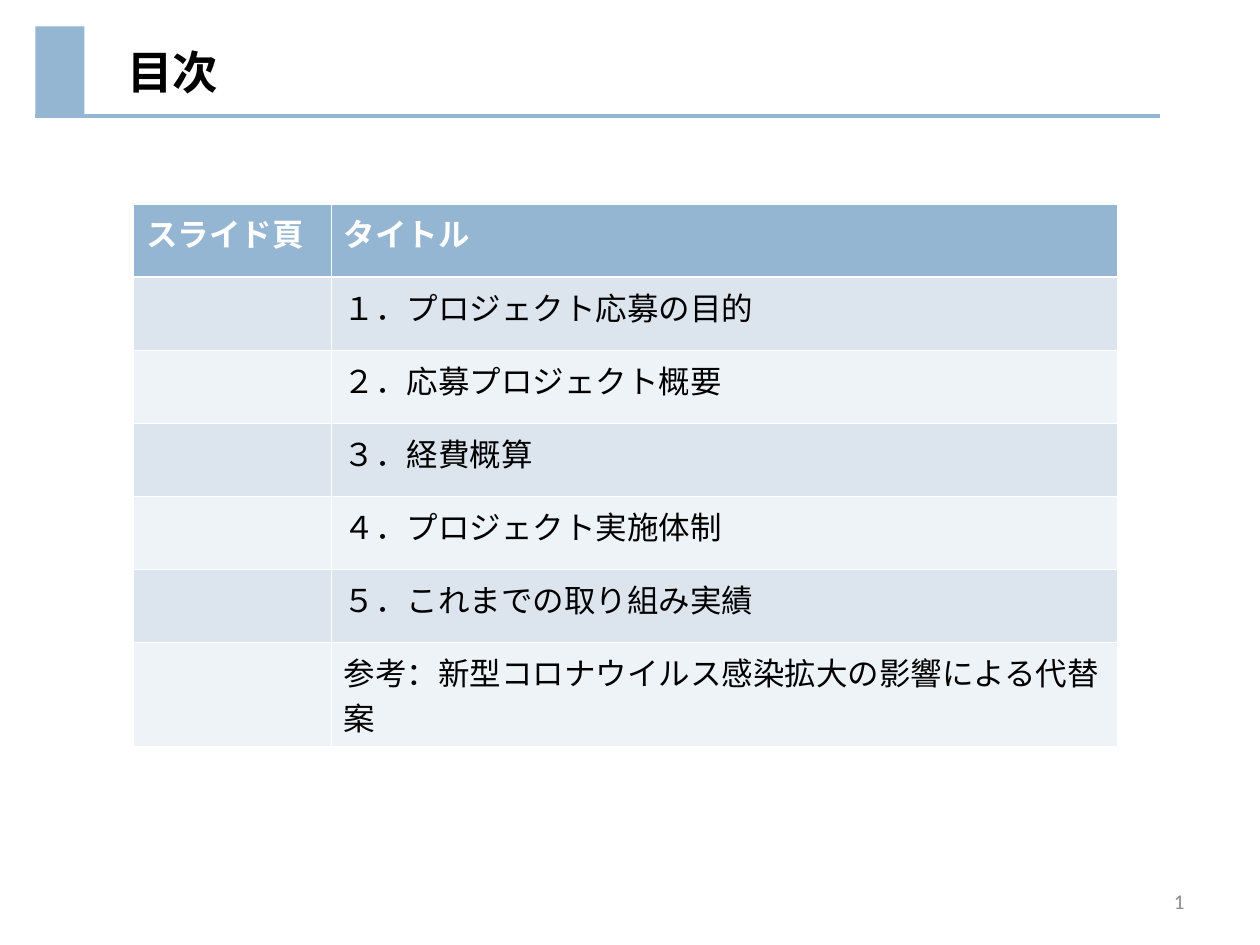
import pptx
import pptx.util
import pptx.dml.color
import pptx.enum.shapes
import pptx.enum.text
import lxml.etree

Inches, Pt = pptx.util.Inches, pptx.util.Pt
RGB = pptx.dml.color.RGBColor
ALIGN = pptx.enum.text.PP_ALIGN
MIDDLE = pptx.enum.text.MSO_ANCHOR.MIDDLE

# Content
TITLE = "目次"
HEADS = ("スライド頁", "タイトル")
ITEMS = [
    "１．プロジェクト応募の目的",
    "２．応募プロジェクト概要",
    "３．経費概算",
    "４．プロジェクト実施体制",
    "５．これまでの取り組み実績",
    ("参考：", "新型", "コロナウイルス感染拡大の影響による代替案"),
]

# Formats
BLUE = RGB(0x94, 0xB6, 0xD2)
BANDS = (RGB(0xDC, 0xE5, 0xEE), RGB(0xEE, 0xF3, 0xF7))
BLACK, WHITE, GREY = RGB(0, 0, 0), RGB(255, 255, 255), RGB(0x8C, 0x8C, 0x8C)
HEAD = {"name": "Calibri", "size": Pt(18), "bold": True}
BODY = {**HEAD, "bold": False}
COLS = (1.57, 6.24)
ROW = 0.58


def style(font, form, color):
    for key, val in form.items():
        setattr(font, key, val)
    font.color.rgb = color


def fill_cell(cell, parts, form, text_color, back):
    cell.fill.solid()
    cell.fill.fore_color.rgb = back
    para = cell.text_frame.paragraphs[0]
    for i, part in enumerate(parts):
        run = para.add_run()
        run.text = part
        style(run.font, form, text_color)
        if i == 1:
            run.font.name = "Arial"


deck = pptx.Presentation()
deck.slide_width, deck.slide_height = Inches(10), Inches(7.5)
slide = deck.slides.add_slide(deck.slide_layouts[5])
shapes = slide.shapes

# Title band: rule, block and heading
rule = shapes.add_connector(pptx.enum.shapes.MSO_CONNECTOR.STRAIGHT,
                            Inches(0.28), Inches(0.92), Inches(9.21), Inches(0.92))
rule.line.color.rgb = BLUE
rule.line.width = Pt(2)
lxml.etree.SubElement(rule._element.spPr, pptx.oxml.ns.qn("a:effectLst"))

block = shapes.add_shape(pptx.enum.shapes.MSO_SHAPE.RECTANGLE,
                         Inches(0.28), Inches(0.21), Inches(0.39), Inches(0.71))
block.shadow.inherit = False
block.fill.solid()
block.fill.fore_color.rgb = BLUE
block.line.fill.background()

title = shapes.title
title.left, title.top, title.width, title.height = map(Inches, (0.91, 0.21, 6.9, 0.71))
frame = title.text_frame
frame.text = TITLE
frame.vertical_anchor = MIDDLE
frame.auto_size = pptx.enum.text.MSO_AUTO_SIZE.NONE
frame.paragraphs[0].alignment = ALIGN.LEFT
style(frame.paragraphs[0].runs[0].font, {**HEAD, "size": Pt(26)}, BLACK)

# Contents table
count = len(ITEMS) + 1
table = shapes.add_table(count, len(COLS), Inches(1.06), Inches(1.62),
                         Inches(sum(COLS)), Inches(ROW * count)).table
for col, width in zip(table.columns, COLS):
    col.width = Inches(width)
for row in table.rows:
    row.height = Inches(ROW)
for c, head in enumerate(HEADS):
    fill_cell(table.cell(0, c), [head], HEAD, WHITE, BLUE)
for r, item in enumerate(ITEMS):
    parts = [item] if isinstance(item, str) else item
    back = BANDS[r % 2]
    fill_cell(table.cell(r + 1, 0), [], BODY, BLACK, back)
    fill_cell(table.cell(r + 1, 1), parts, BODY, BLACK, back)

# Page number
page = shapes.add_textbox(Inches(7.17), Inches(6.95), Inches(2.33), Inches(0.4)).text_frame
page.word_wrap = True
page.vertical_anchor = MIDDLE
para = page.paragraphs[0]
para.alignment = ALIGN.RIGHT
run = para.add_run()
run.text = "1"
style(run.font, {"name": "Calibri", "size": Pt(12)}, GREY)

deck.save("out.pptx")
